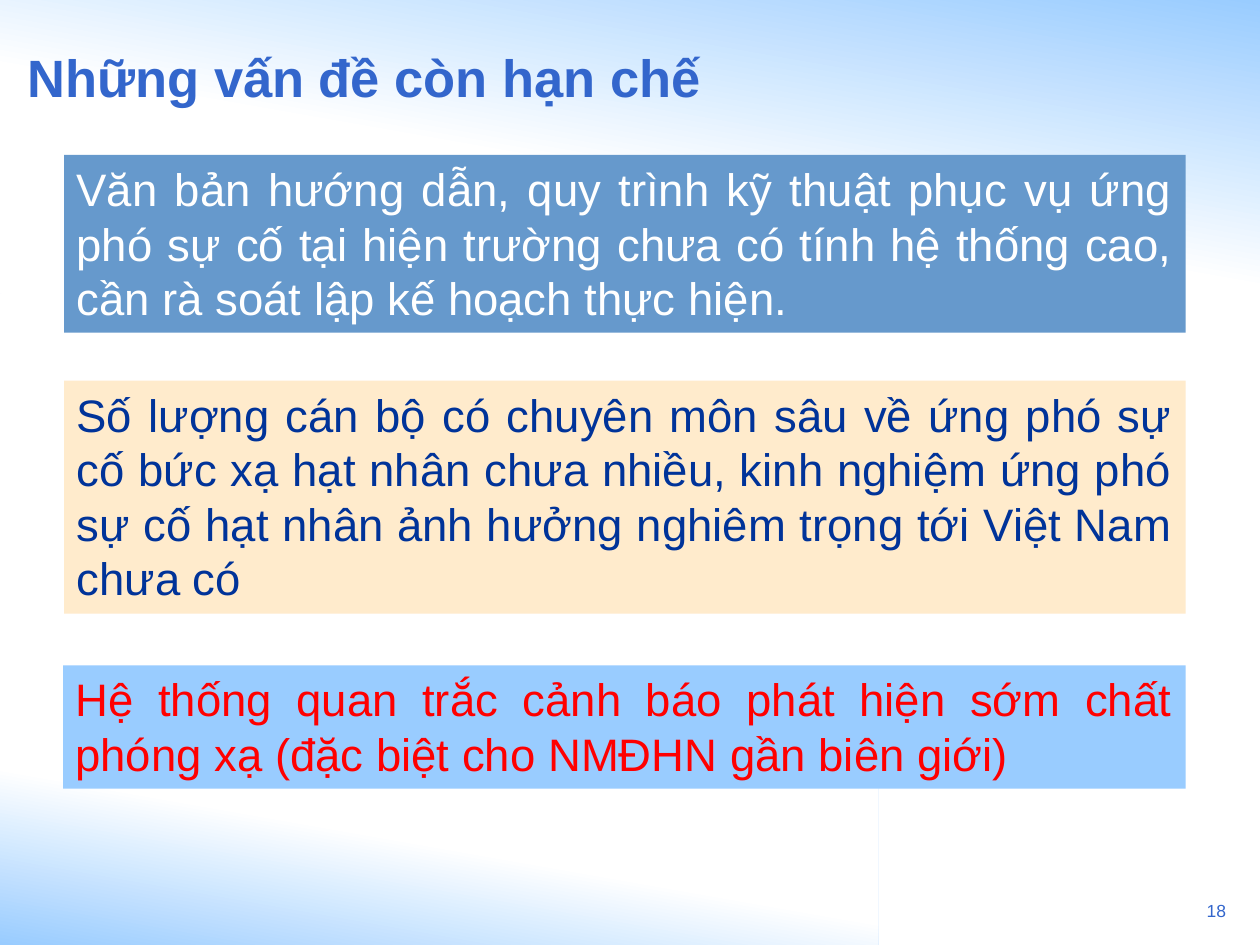
"""Build the slide on remaining limitations in emergency response."""
from pptx import Presentation
from pptx.dml.color import RGBColor
from pptx.enum.shapes import MSO_SHAPE
from pptx.enum.text import MSO_ANCHOR, MSO_AUTO_SIZE, PP_ALIGN
from pptx.util import Inches, Pt

RECTANGLE = MSO_SHAPE.RECTANGLE
TOP, MIDDLE = MSO_ANCHOR.TOP, MSO_ANCHOR.MIDDLE
GROW, FIXED = MSO_AUTO_SIZE.SHAPE_TO_FIT_TEXT, MSO_AUTO_SIZE.NONE
LEFT, RIGHT, JUSTIFY = PP_ALIGN.LEFT, PP_ALIGN.RIGHT, PP_ALIGN.JUSTIFY

WHITE = RGBColor(0xFF, 0xFF, 0xFF)
SKY = RGBColor(0x99, 0xCC, 0xFF)
STEEL = RGBColor(0x66, 0x99, 0xCC)
CREAM = RGBColor(0xFF, 0xEB, 0xCC)
ROYAL = RGBColor(0x33, 0x66, 0xCC)
NAVY = RGBColor(0x00, 0x33, 0x99)
RED = RGBColor(0xFF, 0x00, 0x00)

PANELS = [
    (0.51, 1.23, 8.9, 1.41, STEEL, WHITE,
     "Văn bản hướng dẫn, quy trình kỹ thuật phục vụ ứng phó sự cố tại hiện "
     "trường chưa có tính hệ thống cao, cần rà soát lập kế hoạch thực hiện."),
    (0.51, 3.02, 8.9, 1.85, CREAM, NAVY,
     "Số lượng cán bộ có chuyên môn sâu về ứng phó sự cố bức xạ hạt nhân "
     "chưa nhiều, kinh nghiệm ứng phó sự cố hạt nhân ảnh hưởng nghiêm trọng "
     "tới Việt Nam chưa có"),
    (0.5, 5.28, 8.91, 0.98, SKY, RED,
     "Hệ thống quan trắc cảnh báo phát hiện sớm chất phóng xạ (đặc biệt cho "
     "NMĐHN gần biên giới)"),
]


def write_text(box, text, size, color, bold=False, align=LEFT, anchor=TOP, fit=FIXED):
    frame = box.text_frame
    frame.word_wrap = True
    frame.auto_size = fit
    frame.vertical_anchor = anchor
    para = frame.paragraphs[0]
    para.alignment = align
    span = para.add_run()
    span.text = text
    span.font.name = "Arial"
    span.font.size = Pt(size)
    span.font.bold = bold
    span.font.color.rgb = color


class SlideBuilder:
    def __init__(self, slide):
        self.slide = slide

    def rectangle(self, *bounds):
        shape = self.slide.shapes.add_shape(RECTANGLE, *map(Inches, bounds))
        shape.shadow.inherit = False
        shape.line.fill.background()
        return shape

    def gradient(self, *bounds, angle, fade_end):
        fill = self.rectangle(*bounds).fill
        fill.gradient()
        fill.gradient_angle = angle
        for stop, color, position in zip(fill.gradient_stops, (SKY, WHITE), (0, fade_end)):
            stop.color.rgb = color
            stop.position = position

    def panel(self, *bounds, fill, text, color):
        box = self.rectangle(*bounds)
        box.fill.solid()
        box.fill.fore_color.rgb = fill
        write_text(box, text, 26, color, align=JUSTIFY, fit=GROW)

    def label(self, *bounds, text, **style):
        box = self.slide.shapes.add_textbox(*map(Inches, bounds))
        write_text(box, text, color=ROYAL, **style)


def main():
    deck = Presentation()
    deck.slide_width, deck.slide_height = Inches(10), Inches(7.5)
    page = SlideBuilder(deck.slides.add_slide(deck.slide_layouts[6]))
    page.gradient(0, 5.8, 6.97, 1.7, angle=80, fade_end=0.48)
    page.gradient(0, 0, 10, 2.33, angle=260, fade_end=0.56)
    page.label(9.27, 7.09, 0.56, 0.32, text="18", size=10, align=RIGHT)
    page.label(0.12, 0.14, 7.72, 0.94, text="Những vấn đề còn hạn chế",
               size=30, bold=True, anchor=MIDDLE)
    for *bounds, fill, color, text in PANELS:
        page.panel(*bounds, fill=fill, text=text, color=color)
    deck.save("out.pptx")


if __name__ == "__main__":
    main()
